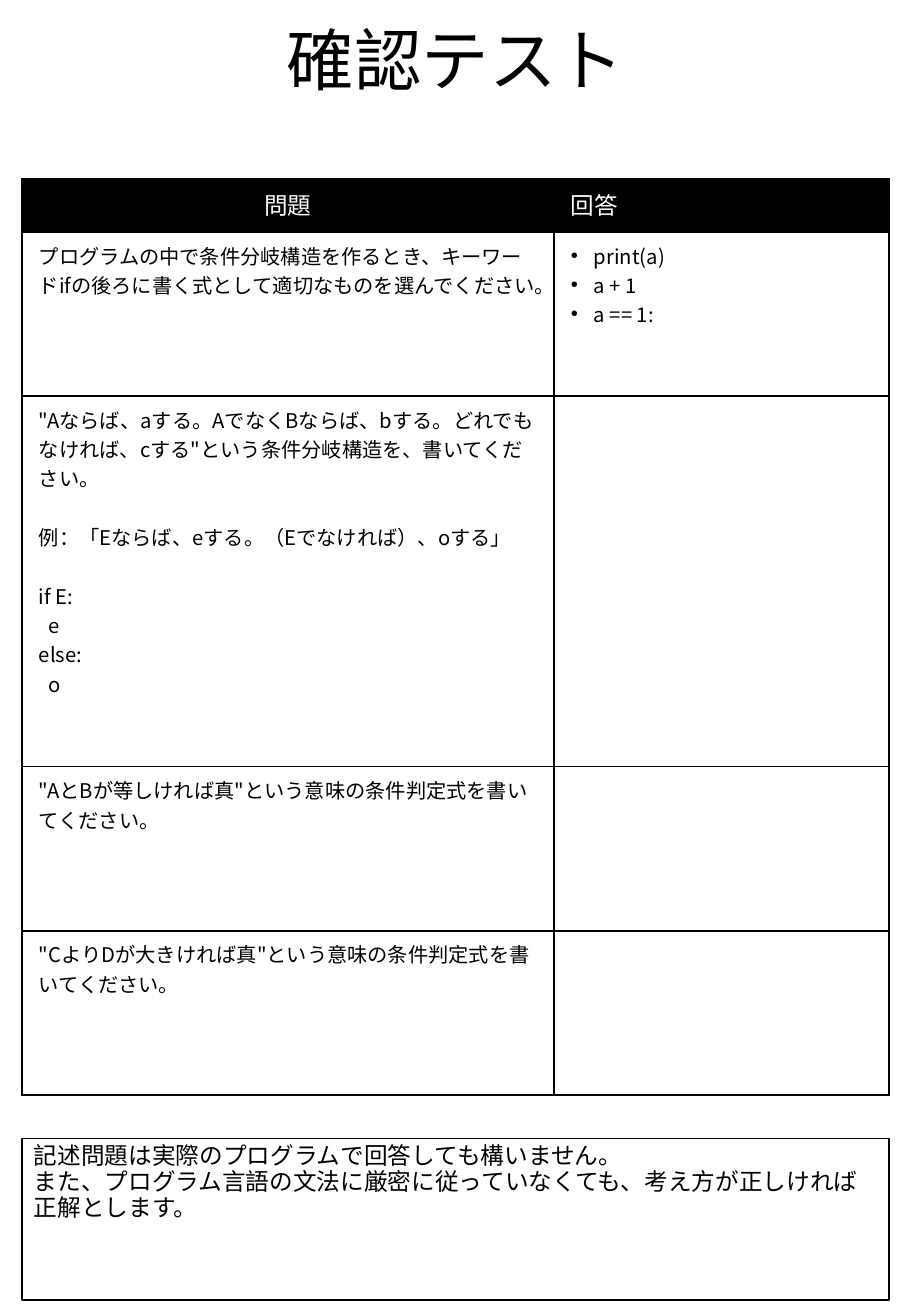
"""Build the one-page test sheet on conditional branching."""
from lxml.etree import SubElement
from pptx import Presentation
from pptx.dml.color import RGBColor
from pptx.enum.shapes import MSO_SHAPE
from pptx.enum.text import MSO_ANCHOR, PP_ALIGN
from pptx.oxml.ns import qn
from pptx.util import Inches, Pt

BLACK = RGBColor(0, 0, 0)
WHITE = RGBColor(255, 255, 255)
FONT = "Noto Sans CJK JP"
LEFT, WIDTH = Inches(0.18), Inches(7.14)
BLANK_LINE = 17.4
CODE_INDENT = 0.08
BULLET_INDENT = 0.19


def write(paragraph, text, size, color=BLACK, align=PP_ALIGN.LEFT):
    paragraph.alignment = align
    run = paragraph.add_run()
    run.text = text
    run.font.size = Pt(size)
    run.font.bold = False
    run.font.name = FONT
    run.font.color.rgb = color
    SubElement(run.font._element, qn("a:ea"), typeface=FONT)


def border_and_fill(cell, fill):
    properties = cell._tc.get_or_add_tcPr()
    for side in ("lnL", "lnR", "lnT", "lnB"):
        line = SubElement(properties, qn(f"a:{side}"), w=str(Pt(1)))
        line_fill = SubElement(line, qn("a:solidFill"))
        SubElement(line_fill, qn("a:srgbClr"), val=str(BLACK))
    cell.fill.solid()
    cell.fill.fore_color.rgb = fill


prs = Presentation()
prs.slide_width, prs.slide_height = Inches(7.5), Inches(10.83)
slide = prs.slides.add_slide(prs.slide_layouts[6])

title = slide.shapes.add_textbox(
    Inches(0.56), Inches(0.06), Inches(6.38), Inches(0.81)).text_frame
title.word_wrap = True
title.vertical_anchor = MSO_ANCHOR.BOTTOM
title.paragraphs[0].line_spacing = 0.9
write(title.paragraphs[0], "確認テスト", 40, align=PP_ALIGN.CENTER)

# Each line: text, space before in points, left indent in inches
questions = [
    [("プログラムの中で条件分岐構造を作るとき、キーワードifの後ろに書く式として適切なものを選んでください。", 0, 0)],
    [('"Aならば、aする。AでなくBならば、bする。どれでもなければ、cする"という条件分岐構造を、書いてください。', 0, 0),
     ("例：「Eならば、eする。（Eでなければ）、oする」", BLANK_LINE, 0),
     ("if E:", BLANK_LINE, 0),
     ("e", 0, CODE_INDENT),
     ("else:", 0, 0),
     ("o", 0, CODE_INDENT)],
    [('"AとBが等しければ真"という意味の条件判定式を書いてください。', 0, 0)],
    [('"CよりDが大きければ真"という意味の条件判定式を書いてください。', 0, 0)],
]
choices = ["print(a)", "a + 1", "a == 1:"]
row_heights = [0.44, 1.35, 3.05, 1.35, 1.35]

test = slide.shapes.add_table(
    len(row_heights), 2, LEFT, Inches(1.47), WIDTH, Inches(sum(row_heights))).table
test.first_row = test.horz_banding = False
for column, width in zip(test.columns, (4.38, 2.76)):
    column.width = Inches(width)
for row, height in zip(test.rows, row_heights):
    row.height = Inches(height)

for index, row in enumerate(test.rows):
    for cell in row.cells:
        cell.margin_left = cell.margin_right = Inches(0.14)
        cell.margin_top = cell.margin_bottom = Inches(0.07)
        border_and_fill(cell, WHITE if index else BLACK)

headings = [("問題", PP_ALIGN.CENTER), ("回答", PP_ALIGN.LEFT)]
for column, (heading, align) in enumerate(headings):
    write(test.cell(0, column).text_frame.paragraphs[0], heading, 14, WHITE, align)

for row, lines in enumerate(questions, start=1):
    question = test.cell(row, 0).text_frame
    for number, (text, before, indent) in enumerate(lines):
        paragraph = question.add_paragraph() if number else question.paragraphs[0]
        paragraph.space_before = Pt(before)
        paragraph._p.get_or_add_pPr().set("marL", str(Inches(indent)))
        write(paragraph, text, 12)

answer = test.cell(1, 1).text_frame
for number, choice in enumerate(choices):
    paragraph = answer.add_paragraph() if number else answer.paragraphs[0]
    properties = paragraph._p.get_or_add_pPr()
    properties.set("marL", str(Inches(BULLET_INDENT)))
    properties.set("indent", str(-Inches(BULLET_INDENT)))
    SubElement(properties, qn("a:buFont"), typeface="Arial")
    SubElement(properties, qn("a:buChar"), char="•")
    write(paragraph, choice, 12)

note_box = slide.shapes.add_shape(
    MSO_SHAPE.RECTANGLE, LEFT, Inches(9.37), WIDTH, Inches(1.33))
note_box.shadow.inherit = False
note_box.fill.solid()
note_box.fill.fore_color.rgb = WHITE
note_box.line.color.rgb = BLACK
note_box.line.width = Pt(1)
note = note_box.text_frame
note.word_wrap = True
note.vertical_anchor = MSO_ANCHOR.TOP
note_lines = [
    "記述問題は実際のプログラムで回答しても構いません。",
    "また、プログラム言語の文法に厳密に従っていなくても、考え方が正しければ正解とします。",
]
for number, text in enumerate(note_lines):
    paragraph = note.add_paragraph() if number else note.paragraphs[0]
    paragraph.line_spacing = 0.9
    write(paragraph, text, 14)

prs.save("out.pptx")
